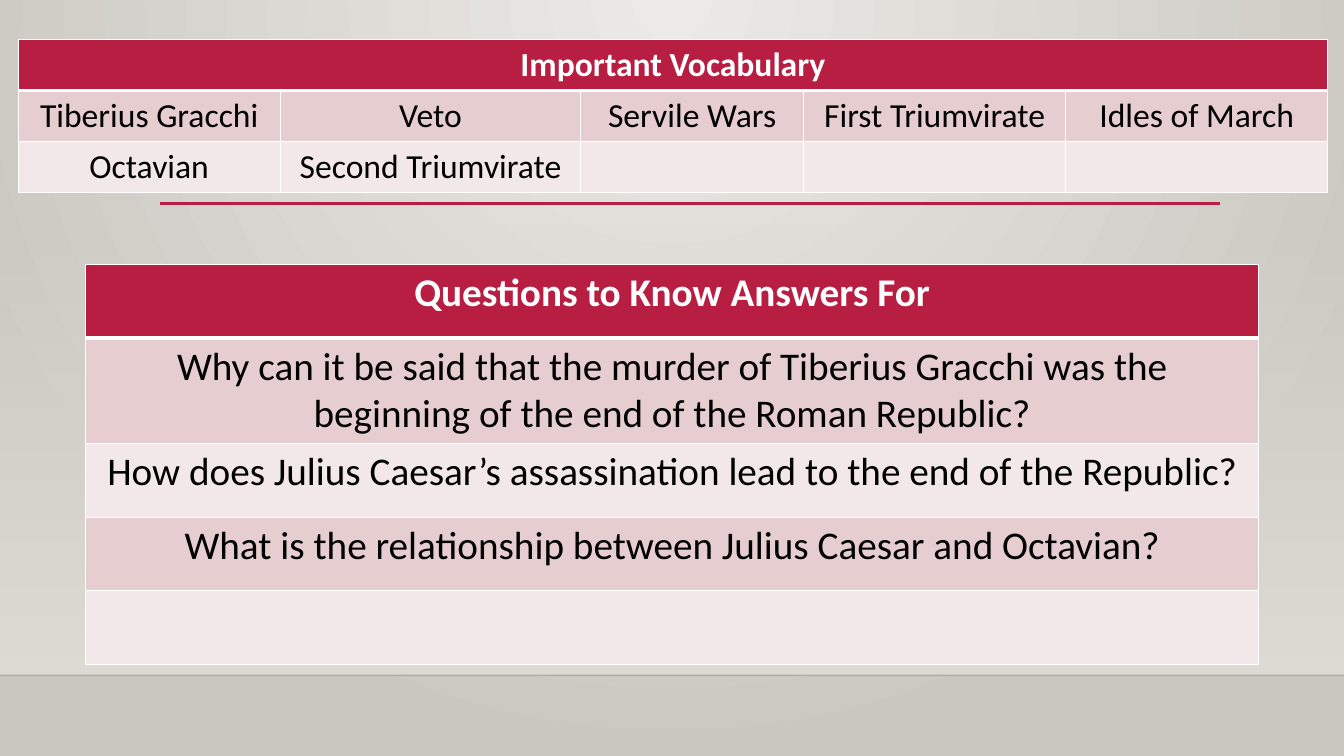
import dataclasses

import pptx
import pptx.dml.color
import pptx.enum.shapes
import pptx.enum.text
import pptx.oxml.ns
import pptx.util
from lxml import etree

qn = pptx.oxml.ns.qn
Inches = pptx.util.Inches


@dataclasses.dataclass(frozen=True)
class Theme:
    font: str = "Calibri"
    accent: str = "B71E42"
    bands: tuple = ("E6CDCF", "F3E8E9")
    header_text: str = "FFFFFF"
    body_text: str = "000000"
    border: str = "FFFFFF"
    background: tuple = ("ECEAE7", "CAC7C1")
    wall: str = "DFDBD5"
    floor_line: str = "000001"
    vocabulary_size: int = 24
    question_size: int = 28


def rgb(color):
    return pptx.dml.color.RGBColor.from_string(color)


def set_alpha(color_element, percent):
    etree.SubElement(color_element, qn("a:alpha"), val=str(percent * 1000))


class SlideBuilder:
    def __init__(self, slide, theme):
        self.slide = slide
        self.theme = theme

    def gradient(self, fill, colors):
        fill.gradient()
        for stop, color, position in zip(fill.gradient_stops, colors, (0, 1)):
            stop.color.rgb = rgb(color)
            stop.position = position

    def background(self):
        self.gradient(self.slide.background.fill, self.theme.background)
        gradient = self.slide.element.find(".//" + qn("a:gradFill"))
        gradient.remove(gradient.find(qn("a:lin")))
        circle = etree.SubElement(gradient, qn("a:path"), {"path": "circle"})
        etree.SubElement(circle, qn("a:fillToRect"), l="43000", t="0", r="43000", b="100000")

    def wall(self, left, top, width, height):
        shape = self.slide.shapes.add_shape(
            pptx.enum.shapes.MSO_SHAPE.RECTANGLE,
            Inches(left), Inches(top), Inches(width), Inches(height))
        shape.shadow.inherit = False
        shape.line.fill.background()
        self.gradient(shape.fill, (self.theme.wall, self.theme.wall))
        shape.fill.gradient_angle = 270
        set_alpha(shape.element.find(".//" + qn("a:srgbClr")), 0)

    def rule(self, left, right, top, color, weight, opacity=100):
        connector = self.slide.shapes.add_connector(
            pptx.enum.shapes.MSO_CONNECTOR.STRAIGHT,
            Inches(left), Inches(top), Inches(right), Inches(top))
        connector.line.color.rgb = rgb(color)
        connector.line.width = pptx.util.Pt(weight)
        properties = connector.element.spPr
        etree.SubElement(properties, qn("a:effectLst"))
        if opacity < 100:
            set_alpha(properties.find(".//" + qn("a:srgbClr")), opacity)

    def borders(self, cell, top, bottom):
        properties = cell._tc.get_or_add_tcPr()
        for side, weight in (("L", 1), ("R", 1), ("T", top), ("B", bottom)):
            line = etree.SubElement(
                properties, qn("a:ln" + side), w=str(pptx.util.Pt(weight)))
            solid = etree.SubElement(line, qn("a:solidFill"))
            etree.SubElement(solid, qn("a:srgbClr"), val=self.theme.border)

    def cell(self, cell, text, row, size):
        theme = self.theme
        is_header = row == 0
        self.borders(cell, 3 if row == 1 else 1, 3 if is_header else 1)
        cell.fill.solid()
        cell.fill.fore_color.rgb = rgb(theme.accent if is_header else theme.bands[(row - 1) % 2])
        if not text:
            return
        paragraph = cell.text_frame.paragraphs[0]
        paragraph.alignment = pptx.enum.text.PP_ALIGN.CENTER
        run = paragraph.add_run()
        run.text = text
        run.font.name = theme.font
        run.font.size = pptx.util.Pt(size)
        run.font.bold = is_header
        run.font.color.rgb = rgb(theme.header_text if is_header else theme.body_text)

    def table(self, left, top, widths, heights, rows, size):
        table = self.slide.shapes.add_table(
            len(heights), len(widths), Inches(left), Inches(top),
            Inches(sum(widths)), Inches(sum(heights))).table
        for column, width in zip(table.columns, widths):
            column.width = Inches(width)
        for row, height in zip(table.rows, heights):
            row.height = Inches(height)
        if len(widths) > 1:
            table.cell(0, 0).merge(table.cell(0, len(widths) - 1))
        for row_index in range(len(heights)):
            texts = rows[row_index] if row_index < len(rows) else ()
            for column_index in range(len(widths)):
                text = texts[column_index] if column_index < len(texts) else ""
                self.cell(table.cell(row_index, column_index), text, row_index, size)


def main():
    theme = Theme()
    presentation = pptx.Presentation()
    presentation.slide_width = Inches(13.33)
    presentation.slide_height = Inches(7.5)
    slide = presentation.slides.add_slide(presentation.slide_layouts[6])
    builder = SlideBuilder(slide, theme)

    builder.background()
    builder.wall(0, 2.21, 13.33, 4.49)
    builder.rule(0, 13.33, 6.7, theme.floor_line, 1, opacity=20)
    builder.rule(1.59, 12.1, 2.02, theme.accent, 2.5)

    vocabulary = [
        ["Important Vocabulary"],
        ["Tiberius Gracchi", "Veto", "Servile Wars", "First Triumvirate", "Idles of March"],
        ["Octavian", "Second Triumvirate"],
    ]
    builder.table(0.18, 0.39, [2.6, 2.98, 2.21, 2.6, 2.6], [0.5] * 3,
                  vocabulary, theme.vocabulary_size)

    questions = [
        ["Questions to Know Answers For"],
        ["Why can it be said that the murder of Tiberius Gracchi was the "
         "beginning of the end of the Roman Republic?"],
        ["How does Julius Caesar’s assassination lead to the end of the Republic?"],
        ["What is the relationship between Julius Caesar and Octavian?"],
    ]
    builder.table(0.85, 2.62, [11.63], [0.73, 1.05, 0.73, 0.73, 0.73],
                  questions, theme.question_size)

    presentation.save("out.pptx")


if __name__ == "__main__":
    main()
